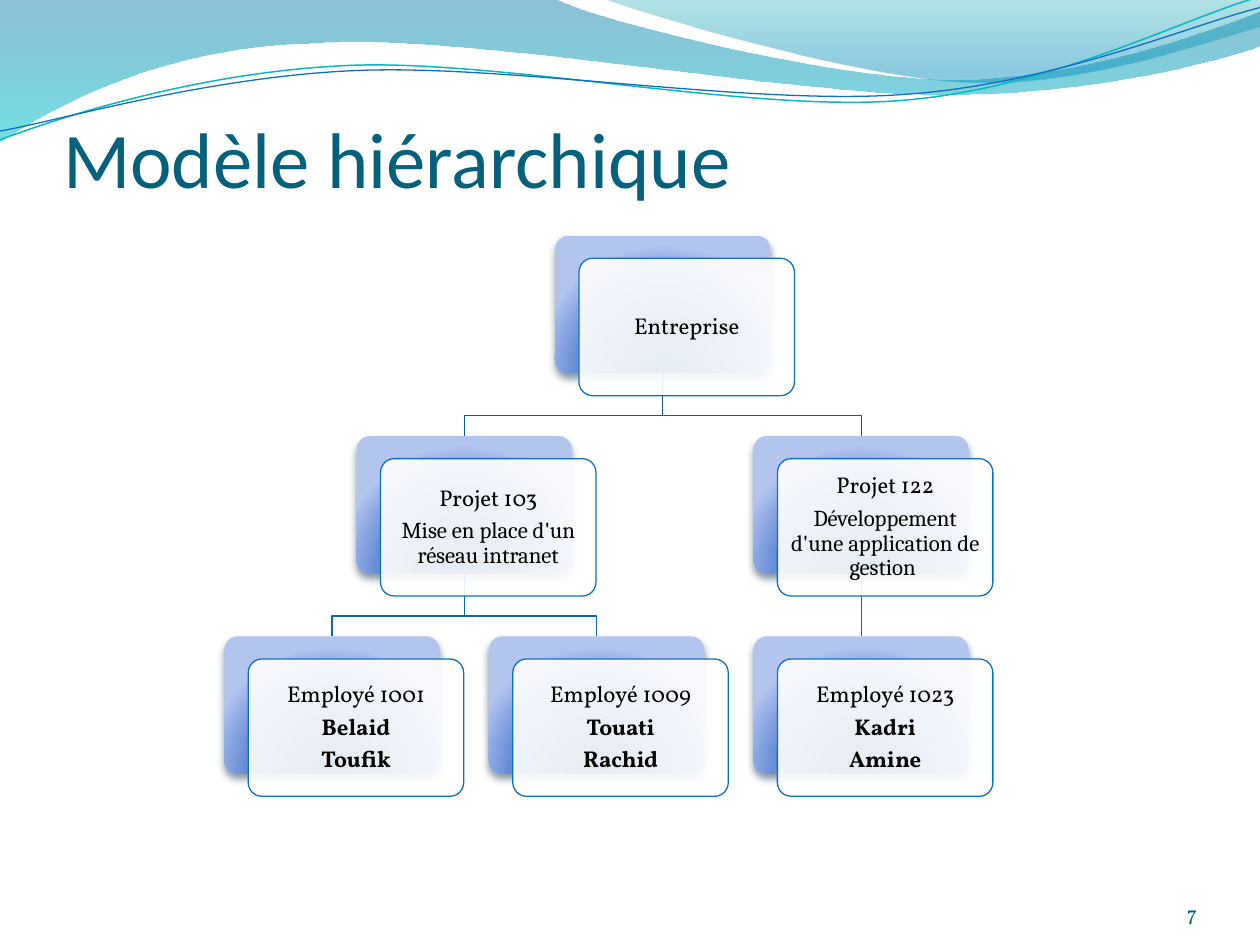
from lxml.etree import SubElement
from pptx import Presentation
from pptx.dml.color import RGBColor
from pptx.enum.shapes import MSO_SHAPE
from pptx.enum.text import MSO_ANCHOR, PP_ALIGN
from pptx.oxml.ns import qn
from pptx.util import Inches, Pt

BLACK = RGBColor(0x00, 0x00, 0x00)
WHITE = RGBColor(0xFF, 0xFF, 0xFF)
BLUE = RGBColor(0x0F, 0x6F, 0xC6)
TURQUOISE = RGBColor(0x0A, 0xB8, 0xBF)
TITLE_TEAL = RGBColor(0x04, 0x61, 0x7B)
NUMBER_TEAL = RGBColor(0x04, 0x5D, 0x75)
UPPER_LINK = RGBColor(0x0C, 0x59, 0x9F)
LOWER_LINK = RGBColor(0x0E, 0x65, 0xB4)
SHADOW = RGBColor(0x04, 0x27, 0x47)
NAVY, MID_BLUE, PALE_BLUE = (RGBColor(0x00, 0x3D, 0x87), RGBColor(0x66, 0x8D, 0xD7),
                             RGBColor(0xB3, 0xC4, 0xEF))
WAVE_TOP, WAVE_BOTTOM = RGBColor(0x00, 0x74, 0xA1), RGBColor(0x00, 0xC6, 0xCF)
CREST_TOP, CREST_BOTTOM = RGBColor(0x00, 0xA1, 0xA9), RGBColor(0x00, 0x8B, 0xBF)

deck = Presentation()
deck.slide_width, deck.slide_height = Inches(10), Inches(7.5)
page = deck.slides.add_slide(deck.slide_layouts[5])


def draw_path(start, segments, closed=False):
    """Outline from line segments (x, y) and Bézier segments (x1, y1, x2, y2, x, y)."""
    points = [(Inches(segment[i]), Inches(segment[i + 1]))
              for segment in segments for i in range(0, len(segment), 2)]
    builder = page.shapes.build_freeform(Inches(start[0]), Inches(start[1]), scale=1.0)
    builder.add_line_segments(points, close=closed)
    shape = builder.convert_to_shape()
    # Turn each run of three points that belongs to a curve into a Bézier
    steps = iter(list(shape._element.spPr.iter(qn("a:lnTo"))))
    for segment in segments:
        step = next(steps)
        if len(segment) == 6:
            curve = step.makeelement(qn("a:cubicBezTo"))
            step.addprevious(curve)
            for part in (step, next(steps), next(steps)):
                curve.append(part[0])
                part.getparent().remove(part)
    shape.shadow.inherit = False
    shape.fill.background()
    return shape


def fill_gradient(shape, stops, circle=False):
    """Gradient from (percent, colour, opacity) stops: top to bottom, or circular."""
    shape.fill.gradient()
    gradient = shape._element.spPr.find(qn("a:gradFill"))
    for child in list(gradient):
        gradient.remove(child)
    stop_list = SubElement(gradient, qn("a:gsLst"))
    for percent, colour, opacity in stops:
        stop = SubElement(stop_list, qn("a:gs"), pos=str(percent * 1000))
        tone = SubElement(stop, qn("a:srgbClr"), val=str(colour))
        if opacity < 100:
            SubElement(tone, qn("a:alpha"), val=str(opacity * 1000))
    if circle:
        course = SubElement(gradient, qn("a:path"), **{"path": "circle"})
        SubElement(course, qn("a:fillToRect"), l="50000", t="130000", r="50000", b="-30000")
    else:
        SubElement(gradient, qn("a:lin"), ang="5400000", scaled="1")
    shape.line.fill.background()


# Header waves
wave = draw_path((0, 0), [
    (4.4, -0.01), (4.76, 0.17, 6.64, 0.63, 7.58, 0.63), (8.53, 0.63, 9.58, 0.26, 10, 0.09),
    (10.01, 0.36), (9.83, 0.44, 8.7, 0.76, 7.46, 0.75), (6.22, 0.75, 3.82, 0.28, 2.57, 0.34),
    (1.29, 0.36, 0.46, 0.83, -0.01, 1.13), (0, 0)], closed=True)
fill_gradient(wave, [(0, WAVE_TOP, 45), (100, WAVE_BOTTOM, 55)])
crest = draw_path((4.79, -0.01), [
    (5.09, 0.11, 6.82, 0.62, 7.69, 0.65), (8.56, 0.69, 9.61, 0.32, 10, 0.21), (10, 0),
    (4.79, -0.01)], closed=True)
fill_gradient(crest, [(0, CREST_TOP, 30), (80, CREST_BOTTOM, 45)])
for start, curves, colour, width in [
    ((0, 1.11), [(0.48, 0.93, 1.58, 0.57, 2.77, 0.52), (3.95, 0.47, 5.93, 0.89, 7.13, 0.8),
                 (8.33, 0.71, 9.38, 0.15, 9.98, -0.02)], TURQUOISE, 0.85),
    ((0, 1.04), [(0.47, 0.96, 1.64, 0.61, 2.83, 0.56), (4.03, 0.51, 5.97, 0.84, 7.17, 0.75),
                 (8.36, 0.67, 9.41, 0.21, 10, 0.06)], BLUE, 0.75),
]:
    ribbon = draw_path(start, curves)
    ribbon.line.color.rgb, ribbon.line.width = colour, Pt(width)

# Title and slide number
title = page.shapes.title
title.left, title.top, title.width, title.height = map(Inches, (0.5, 0.77, 9, 0.85))
number = page.shapes.add_textbox(*map(Inches, (8.67, 6.95, 0.83, 0.4)))
for box, text, size, font, colour, align, top in [
    (title, "Modèle hiérarchique", 45, "Calibri", TITLE_TEAL, PP_ALIGN.LEFT, 0.05),
    (number, "7", 12, "Vollkorn", NUMBER_TEAL, PP_ALIGN.RIGHT, 0),
]:
    frame = box.text_frame
    frame.word_wrap, frame.vertical_anchor = True, MSO_ANCHOR.BOTTOM
    frame.margin_left = frame.margin_right = frame.margin_bottom = 0
    frame.margin_top = Inches(top)
    para = frame.paragraphs[0]
    para.alignment = align
    span = para.add_run()
    span.text = text
    span.font.size, span.font.name, span.font.color.rgb = Pt(size), font, colour

# Tree grid: (column, row, parent, lines of (text, font, bold))
LEFT, TOP, COLUMN, ROW = 1.78, 1.87, 2.1, 1.59
WIDTH, HEIGHT, SHIFT_X, SHIFT_Y = 1.71, 1.09, 0.19, 0.18
BEND = 0.34
nodes = [
    (1.25, 0, None, [("Entreprise", "Vollkorn", False)]),
    (0.5, 1, 0, [("Projet 103", "Vollkorn", False),
                 ("Mise en place d'un réseau intranet", "Cambria", False)]),
    (2, 1, 0, [("Projet 122", "Vollkorn", False),
               ("Développement d'une application de gestion ", "Cambria", False)]),
]
for column, parent, employee, surname, first_name in [
    (0, 1, "1001", "Belaid", "Toufik"), (1, 1, "1009", "Touati", "Rachid"),
    (2, 2, "1023", "Kadri", "Amine"),
]:
    nodes.append((column, 2, parent, [("Employé " + employee, "Vollkorn", False),
                                      (surname, "Vollkorn", True),
                                      (first_name, "Vollkorn", True)]))

# Links from parent to child, behind the boxes
for column, row, parent, lines in nodes:
    if parent is None:
        continue
    parent_column, parent_row = nodes[parent][:2]
    x_from = LEFT + parent_column * COLUMN + WIDTH / 2
    x_to = LEFT + column * COLUMN + WIDTH / 2
    y_from, y_to = TOP + parent_row * ROW + HEIGHT, TOP + row * ROW
    bends = [(x_from, y_from + BEND), (x_to, y_from + BEND)] if column != parent_column else []
    link = draw_path((x_from, y_from), bends + [(x_to, y_to)])
    link.line.color.rgb = UPPER_LINK if row == 1 else LOWER_LINK
    link.line.width = Pt(0.75)

# Boxes: a blue back plate and a white card with text
for column, row, parent, lines in nodes:
    x, y = LEFT + column * COLUMN, TOP + row * ROW
    plate, card = [
        page.shapes.add_shape(MSO_SHAPE.ROUNDED_RECTANGLE,
                              *map(Inches, (x + shift_x, y + shift_y, WIDTH, HEIGHT)))
        for shift_x, shift_y in ((0, 0), (SHIFT_X, SHIFT_Y))]
    for shape in (plate, card):
        shape.adjustments[0] = 0.1
        shape.shadow.inherit = False
    fill_gradient(plate, [(0, NAVY, 100), (68, MID_BLUE, 100), (100, PALE_BLUE, 100)], circle=True)
    drop = SubElement(plate._element.spPr.find(qn("a:effectLst")), qn("a:outerShdw"),
                      blurRad=str(Pt(4.5)), dist=str(Pt(3)), dir="5400000", rotWithShape="0")
    tone = SubElement(drop, qn("a:srgbClr"), val=str(SHADOW))
    SubElement(tone, qn("a:alpha"), val="48000")
    card.fill.solid()
    card.fill.fore_color.rgb = WHITE
    tone = card._element.spPr.find(qn("a:solidFill")).find(qn("a:srgbClr"))
    SubElement(tone, qn("a:alpha"), val="90000")
    card.line.color.rgb, card.line.width = BLUE, Pt(0.75)
    frame = card.text_frame
    frame.word_wrap, frame.vertical_anchor = True, MSO_ANCHOR.MIDDLE
    frame.margin_left = frame.margin_right = Inches(0.05)
    frame.margin_top = frame.margin_bottom = Inches(0.05)
    for index, (text, font, bold) in enumerate(lines):
        para = frame.add_paragraph() if index else frame.paragraphs[0]
        para.alignment, para.line_spacing, para.space_after = PP_ALIGN.CENTER, 0.9, Pt(4.55)
        span = para.add_run()
        span.text = text
        span.font.size, span.font.name, span.font.bold = Pt(13), font, bold
        span.font.color.rgb = BLACK

deck.save("out.pptx")
